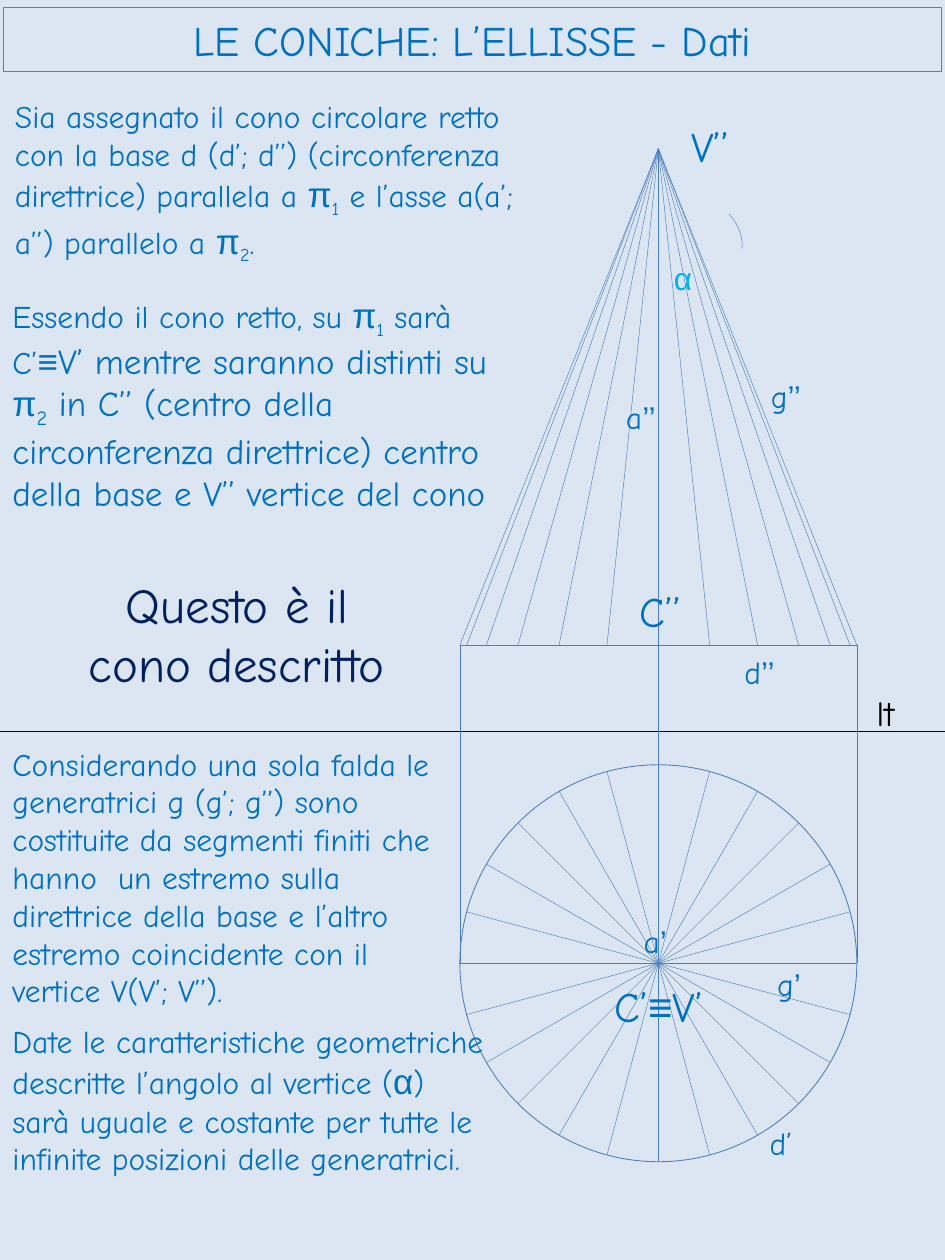
"""Builds the slide on the ellipse as a conic: a right cone in two orthogonal projections."""
from math import cos, radians, sin

from lxml.etree import SubElement
from pptx import Presentation
from pptx.dml.color import RGBColor
from pptx.enum.shapes import MSO_CONNECTOR, MSO_SHAPE
from pptx.enum.text import MSO_ANCHOR, MSO_AUTO_SIZE, PP_ALIGN
from pptx.oxml.ns import qn
from pptx.util import Inches, Pt

COLORS = {"paper": "DCE6F2", "edge": "4F81BD", "line": "4B7EBC", "text": "0070C0",
          "navy": "002060", "angle": "00B0F0", "black": "000000"}
HAND, SANS = "Comic Neue", "Arial"
SYMBOLS = "π≡α"
W, H = 7.5, 10

TITLE = "LE CONICHE: L’ELLISSE - Dati"
PI_1 = [("π", 20), ("1", 18)]
BODY = [
    ((0.02, 0.72, 4.45, 1.38),
     [("Sia assegnato il cono circolare retto con la base d (d’; d’’) "
       "(circonferenza direttrice) parallela a ", 18), *PI_1,
      (" e l’asse a(a’; a’’) parallelo a ", 18), ("π", 20), ("2", 18), (".", 18)]),
    ((0, 2.28, 4.02, 2.09),
     [("Essendo il cono retto, su ", 18), *PI_1, (" sarà C’", 18), ("≡", 20),
      ("V’ mentre saranno distinti su ", 20), ("π", 20), ("2", 20),
      (" in C’’ (centro della circonferenza direttrice) centro della base "
       "e V’’ vertice del cono", 20)]),
    ((0, 5.86, 3.54, 2.22),
     [("Considerando una sola falda le generatrici g (g’; g’’) sono costituite da "
       "segmenti finiti che hanno  un estremo sulla direttrice della base e l’altro "
       "estremo coincidente con il vertice V(V’; V’’).", 18)]),
    ((0, 8.06, 3.98, 1.65),
     [("Date le caratteristiche geometriche descritte l’angolo al vertice (", 18),
      ("α", 20),
      (") sarà uguale e costante per tutte le infinite posizioni delle generatrici.", 18)]),
]
LABELS = [
    ((4.98, 4.6, 0.64, 0.5), [("C’’", 24)], "text"),
    ((4.78, 7.73, 0.94, 0.43), [("C’", 24), ("≡", 24), ("V’", 24)], "text"),
    ((6.02, 2.94, 0.47, 0.42), [("g", 18), ("’’", 18, SANS)], "text"),
    ((6.07, 7.61, 0.44, 0.4), [("g", 18), ("’", 18, SANS)], "text"),
    ((5.81, 5.13, 0.47, 0.4), [("d", 18), ("’’", 18, SANS)], "text"),
    ((6.01, 8.87, 0.44, 0.4), [("d’", 18)], "text"),
    ((4.87, 3.11, 0.47, 0.4), [("a", 18), ("’’", 18, SANS)], "text"),
    ((5.01, 7.27, 0.47, 0.4), [("a", 18), ("’", 18, SANS)], "text"),
    ((5.25, 2.01, 0.32, 0.4), [("α", 18)], "angle"),
    ((6.86, 5.44, 0.47, 0.44), [("lt", 20)], "black"),
]
APEX_BOX = (5.39, 0.91, 0.64, 0.51)
CALLOUT_BOX = (0.46, 4.51, 2.84, 1.04)

AXIS_X, APEX_Y, BASE_Y, GROUND_Y, CENTRE_Y = 5.225, 1.18, 5.12, 5.8, 7.645
RADIUS = 1.575
STEP = 15


def color(name):
    return RGBColor.from_string(COLORS[name])


def box(values):
    return [Inches(v) for v in values]


def add_line(s, x1, y1, x2, y2, name="line", width=0.25):
    line = s.shapes.add_connector(MSO_CONNECTOR.STRAIGHT, *box((x1, y1, x2, y2)))
    line.line.color.rgb = color(name)
    line.line.width = Pt(width)
    SubElement(line._element.spPr, qn("a:effectLst"))


def add_shape(s, kind, at, fill=None, line=None, width=0.25):
    sp = s.shapes.add_shape(kind, *box(at))
    sp.shadow.inherit = False
    if fill:
        sp.fill.solid()
        sp.fill.fore_color.rgb = color(fill)
    else:
        sp.fill.background()
    if line:
        sp.line.color.rgb = color(line)
        sp.line.width = Pt(width)
    else:
        sp.line.fill.background()
    return sp


def write(sp, pieces, name="text", align=PP_ALIGN.LEFT, anchor=MSO_ANCHOR.TOP):
    tf = sp.text_frame
    tf.word_wrap = True
    tf.auto_size = MSO_AUTO_SIZE.NONE
    tf.vertical_anchor = anchor
    p = tf.paragraphs[0]
    p.alignment = align
    p.font.color.rgb = color(name)
    for text, size, *font in pieces:
        r = p.add_run()
        r.text = text
        r.font.size = Pt(size)
        r.font.name = font[0] if font else SANS if text in SYMBOLS else HAND
        r.font.color.rgb = color(name)
        if text.isdigit():
            r.font._element.set("baseline", "-25000")


def draw_cone(s):
    add_line(s, 0, GROUND_Y, W, GROUND_Y, "black")
    add_shape(s, MSO_SHAPE.OVAL, (AXIS_X - RADIUS, CENTRE_Y - RADIUS, 2 * RADIUS, 2 * RADIUS),
              line="edge", width=0.5)
    for side in (-RADIUS, RADIUS):
        add_line(s, AXIS_X + side, CENTRE_Y, AXIS_X + side, BASE_Y)
    add_line(s, AXIS_X - RADIUS, BASE_Y, AXIS_X + RADIUS, BASE_Y, width=0.5)
    for angle in range(0, 360, STEP):
        x = AXIS_X + RADIUS * cos(radians(angle))
        add_line(s, AXIS_X, CENTRE_Y, x, CENTRE_Y + RADIUS * sin(radians(angle)))
        if angle <= 180 and angle != 90:
            add_line(s, AXIS_X, APEX_Y, x, BASE_Y)
    add_line(s, AXIS_X, APEX_Y, AXIS_X, BASE_Y, width=0.5)
    add_line(s, AXIS_X, BASE_Y, AXIS_X, CENTRE_Y)
    arc = add_shape(s, MSO_SHAPE.ARC, (5.01, 1.56, 0.88, 0.79), line="line")
    arc.rotation = 180
    for i, degrees in enumerate((142.53, 182)):
        arc.adjustments[i] = degrees * 0.6


def main():
    prs = Presentation()
    prs.slide_width, prs.slide_height = Inches(W), Inches(H)
    s = prs.slides.add_slide(prs.slide_layouts[5])
    s.background.fill.solid()
    s.background.fill.fore_color.rgb = color("paper")

    title = s.shapes.title
    title.left, title.top, title.width, title.height = box((0.03, 0.06, 7.44, 0.51))
    title.line.color.rgb = color("edge")
    title.line.width = Pt(0.75)
    write(title, [(TITLE, 24)], align=PP_ALIGN.CENTER, anchor=MSO_ANCHOR.MIDDLE)

    draw_cone(s)
    for at, pieces, name in [(*b, "text") for b in BODY] + LABELS:
        write(s.shapes.add_textbox(*box(at)), pieces, name)

    apex = add_shape(s, MSO_SHAPE.RECTANGLE, APEX_BOX, fill="paper")
    SubElement(apex._element.spPr.find(".//" + qn("a:srgbClr")), qn("a:alpha"), val="50000")
    write(apex, [("V’’", 24)])
    callout = add_shape(s, MSO_SHAPE.RECTANGLE, CALLOUT_BOX, fill="paper")
    write(callout, [("Questo è il cono descritto", 28)], "navy", PP_ALIGN.CENTER)
    prs.save("out.pptx")


if __name__ == "__main__":
    main()
